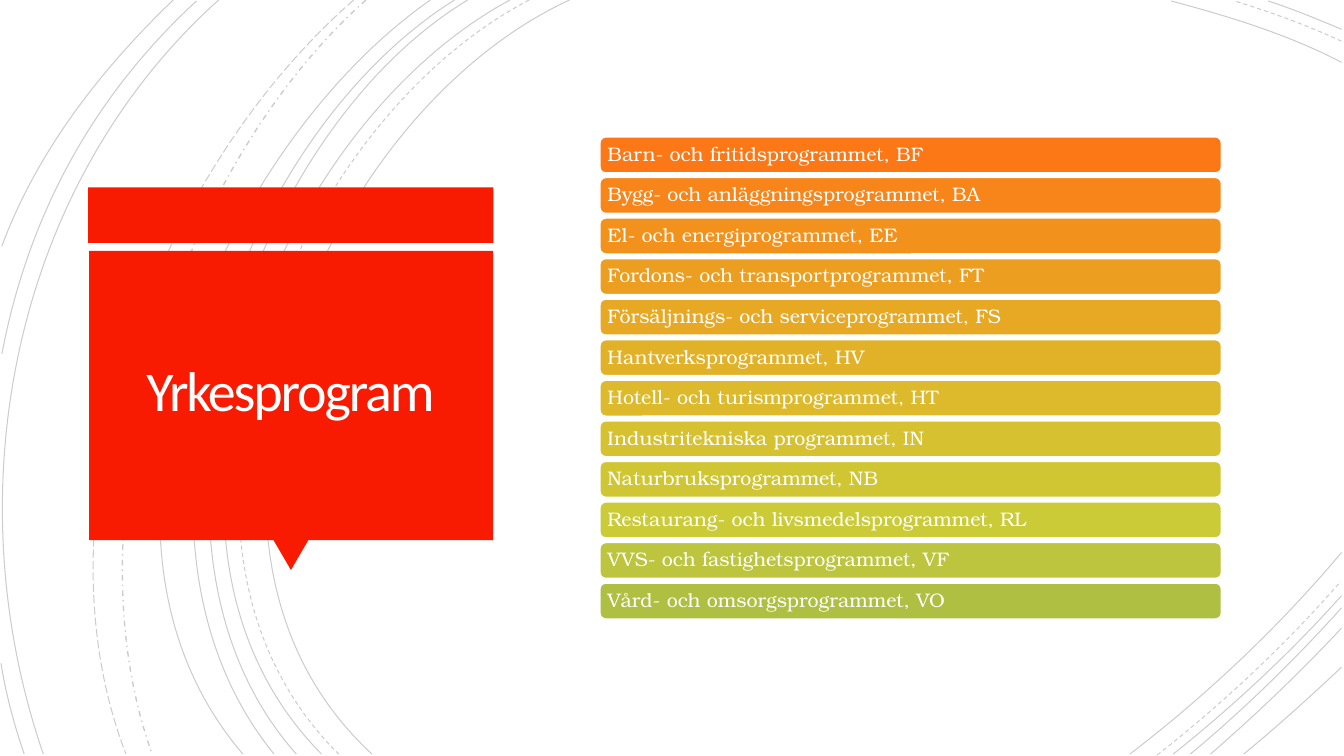
from dataclasses import dataclass

from lxml import etree
from pptx import Presentation, util as u
from pptx.dml.color import RGBColor
from pptx.enum import dml, shapes, text
from pptx.oxml import ns

Pt = u.Pt
BLACK = RGBColor(0x00, 0x00, 0x00)
WHITE = RGBColor(0xFF, 0xFF, 0xFF)
TITLE_WHITE = RGBColor(0xFF, 0xFE, 0xFF)
RED = RGBColor(0xF8, 0x1B, 0x02)

DASH = dml.MSO_LINE.DASH
LONG_DASH = dml.MSO_LINE.LONG_DASH
DASH_DOT = dml.MSO_LINE.DASH_DOT

ARC_OPACITY = 20
BAR_LEFT, BAR_TOP, BAR_WIDTH, BAR_HEIGHT, BAR_PITCH = 428.4, 97.7, 444.2, 25.9, 28.97


@dataclass
class Arc:
    """A cubic curve: start, two control points and end, in points."""
    points: tuple
    dash: dml.MSO_LINE | None = None
    width: float = 0.75


@dataclass
class Panel:
    kind: shapes.MSO_SHAPE
    left: float
    top: float
    width: float
    height: float
    rotation: float = 0


@dataclass
class Programme:
    name: str
    colour: RGBColor


ARCS = [
    Arc(((406.8, 0), (226.8, 82.8), (103, 388.8), (265.7, 538.6))),
    Arc(((958.3, 44.6), (920.2, 24.5), (877, 11.5), (836.6, 0.7))),
    Arc(((807.1, 538.6), (861.8, 496.8), (913.7, 447.8), (958.3, 394.6))),
    Arc(((378, 0), (205.2, 90), (88.6, 386.6), (241.9, 538.6)), DASH),
    Arc(((958.3, 29.5), (933.8, 18), (907.2, 8.6), (882, 0.7)), DASH),
    Arc(((826.6, 539.3), (873.4, 502.6), (918, 460.8), (957.6, 415.4)), DASH),
    Arc(((364.3, 0), (194.4, 91.4), (79.2, 386.6), (229.7, 538.6))),
    Arc(((958.3, 20.9), (941, 13.7), (923.8, 6.5), (905.8, 0.7))),
    Arc(((838.1, 538.6), (880.6, 504.7), (921.6, 466.6), (958.3, 425.5))),
    Arc(((334.1, 0), (175.7, 95.8), (79.2, 389.5), (211.7, 538.6))),
    Arc(((850.3, 538.6), (888.5, 506.9), (924.5, 471.6), (958.3, 434.2))),
    Arc(((324.7, 0), (166.3, 99.4), (69.8, 383.8), (195.8, 538.6))),
    Arc(((864.7, 538.6), (897.1, 510.5), (928.8, 480.2), (958.3, 448.6))),
    Arc(((307.4, 0), (156.2, 105.8), (38.2, 380.9), (173.5, 538.6))),
    Arc(((888.5, 538.6), (912.2, 519.1), (935.3, 498.2), (958.3, 476.6))),
    Arc(((261.4, 0), (126.7, 119.5), (46.8, 366.5), (108.7, 538.6)), DASH_DOT, 1),
    Arc(((252.7, 0), (113, 121.7), (20.9, 359.3), (90, 538.6)), LONG_DASH),
    Arc(((156.2, 0), (7.9, 133.2), (-33.1, 352.8), (31, 538.6))),
    Arc(((140.4, 0.7), (66.2, 69.1), (20.2, 154.1), (1.4, 252.7))),
    Arc(((0.7, 473.8), (4.3, 496.1), (10.1, 517.7), (17.3, 538.6))),
    Arc(((123.8, 0), (72, 49.7), (26.6, 108), (1.4, 175.7))),
]

PANELS = [
    Panel(shapes.MSO_SHAPE.RECTANGLE, 63, 133.9, 289.4, 39.6),
    Panel(shapes.MSO_SHAPE.ISOSCELES_TRIANGLE, 195.2, 385.5, 25.2, 21.6, 180),
    Panel(shapes.MSO_SHAPE.RECTANGLE, 63.6, 179.3, 288.7, 206.6),
]

PROGRAMMES = [
    Programme("Barn- och fritidsprogrammet, BF", RGBColor(0xFC, 0x77, 0x15)),
    Programme("Bygg- och anläggningsprogrammet, BA", RGBColor(0xF7, 0x85, 0x19)),
    Programme("El- och energiprogrammet, EE", RGBColor(0xF2, 0x92, 0x1C)),
    Programme("Fordons- och transportprogrammet, FT", RGBColor(0xEC, 0x9E, 0x20)),
    Programme("Försäljnings- och serviceprogrammet, FS", RGBColor(0xE7, 0xA8, 0x24)),
    Programme("Hantverksprogrammet, HV", RGBColor(0xE1, 0xB2, 0x28)),
    Programme("Hotell- och turismprogrammet, HT", RGBColor(0xDC, 0xBA, 0x2C)),
    Programme("Industritekniska programmet, IN", RGBColor(0xD6, 0xC1, 0x30)),
    Programme("Naturbruksprogrammet, NB", RGBColor(0xD0, 0xC6, 0x34)),
    Programme("Restaurang- och livsmedelsprogrammet, RL", RGBColor(0xCB, 0xCB, 0x38)),
    Programme("VVS- och fastighetsprogrammet, VF", RGBColor(0xBC, 0xC5, 0x3D)),
    Programme("Vård- och omsorgsprogrammet, VO", RGBColor(0xAF, 0xBF, 0x41)),
]


def bend(shape) -> None:
    """Turn the three straight segments of a freeform into one cubic curve."""
    segments = shape.element.findall(".//" + ns.qn("a:lnTo"))
    outline = segments[0].getparent()
    curve = etree.SubElement(outline, ns.qn("a:cubicBezTo"))
    for segment in segments:
        curve.append(segment[0])
        outline.remove(segment)


def draw_arc(slide, arc: Arc) -> None:
    start, *rest = [(Pt(x), Pt(y)) for x, y in arc.points]
    builder = slide.shapes.build_freeform(*start)
    builder.add_line_segments(rest, close=False)
    shape = builder.convert_to_shape()
    bend(shape)
    shape.shadow.inherit = False
    shape.fill.background()
    shape.line.width = Pt(arc.width)
    shape.line.color.rgb = BLACK
    if arc.dash is not None:
        shape.line.dash_style = arc.dash
    colour = shape.element.find(".//" + ns.qn("a:ln")).find(".//" + ns.qn("a:srgbClr"))
    etree.SubElement(colour, ns.qn("a:alpha"), val=str(ARC_OPACITY * 1000))


def draw_panel(slide, panel: Panel, colour: RGBColor):
    shape = slide.shapes.add_shape(panel.kind, Pt(panel.left), Pt(panel.top),
                                   Pt(panel.width), Pt(panel.height))
    shape.rotation = panel.rotation
    shape.shadow.inherit = False
    shape.fill.solid()
    shape.fill.fore_color.rgb = colour
    shape.line.fill.background()
    return shape


def write_text(shape, words: str, *, font: str, size: float, colour: RGBColor,
               align: text.PP_ALIGN, line_spacing: float, inset: float,
               tracking: float = 0) -> None:
    frame = shape.text_frame
    frame.word_wrap = True
    frame.auto_size = text.MSO_AUTO_SIZE.NONE
    frame.vertical_anchor = text.MSO_ANCHOR.MIDDLE
    frame.margin_left = frame.margin_right = Pt(inset)
    frame.margin_top = frame.margin_bottom = Pt(inset)
    paragraph = frame.paragraphs[0]
    paragraph.alignment = align
    paragraph.line_spacing = line_spacing
    run = paragraph.add_run()
    run.text = words
    run.font.name = font
    run.font.size = Pt(size)
    run.font.color.rgb = colour
    if tracking:
        run.font._element.set("spc", str(round(tracking * 100)))


def draw_programme(slide, programme: Programme, row: int) -> None:
    bar = Panel(shapes.MSO_SHAPE.ROUNDED_RECTANGLE, BAR_LEFT,
                BAR_TOP + row * BAR_PITCH, BAR_WIDTH, BAR_HEIGHT)
    shape = draw_panel(slide, bar, programme.colour)
    shape.line.color.rgb = WHITE
    shape.line.width = Pt(1.25)
    write_text(shape, programme.name, font="TeX Gyre Bonum", size=14, colour=WHITE,
               align=text.PP_ALIGN.LEFT, line_spacing=0.9, inset=4.3)


def place_title(slide) -> None:
    title = slide.shapes.title
    title.left, title.top = Pt(69.6), Pt(185)
    title.width, title.height = Pt(275.8), Pt(193.7)
    write_text(title, "Yrkesprogram", font="Calibri", size=40, colour=TITLE_WHITE,
               align=text.PP_ALIGN.CENTER, line_spacing=0.85, inset=18, tracking=-1.5)
    title.element.getparent().append(title.element)  # in front of the red panel


def main() -> None:
    presentation = Presentation()
    presentation.slide_width, presentation.slide_height = Pt(960), Pt(540)
    slide = presentation.slides.add_slide(presentation.slide_layouts[5])
    for arc in ARCS:
        draw_arc(slide, arc)
    for panel in PANELS:
        draw_panel(slide, panel, RED)
    place_title(slide)
    for row, programme in enumerate(PROGRAMMES):
        draw_programme(slide, programme, row)
    presentation.save("out.pptx")


if __name__ == "__main__":
    main()
